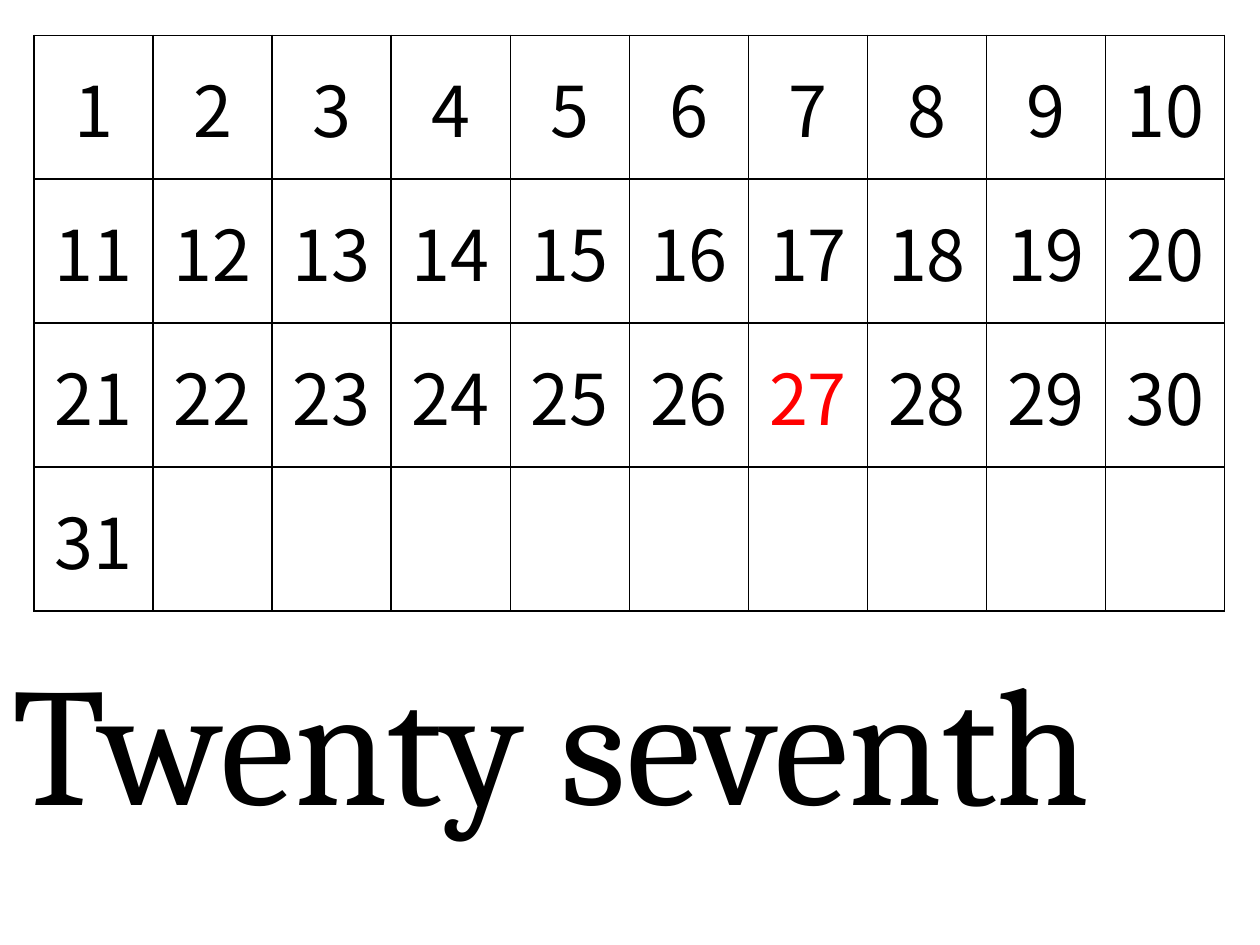
from lxml.etree import SubElement
from pptx import Presentation
from pptx.dml.color import RGBColor
from pptx.enum.text import MSO_ANCHOR as Anchor, MSO_AUTO_SIZE as AutoSize, PP_ALIGN as Align
from pptx.oxml.ns import qn
from pptx.util import Inches, Pt

BLACK, RED = "000000", "FF0000"
DAYS, COLUMNS, ROWS = 31, 10, 4
MARKED_DAY = 27


def color(hex_value):
    return RGBColor.from_string(hex_value)


def format_text(paragraph, alignment, font_color, **font_format):
    paragraph.alignment = alignment
    font = paragraph.runs[0].font
    for name, value in font_format.items():
        setattr(font, name, value)
    font.color.rgb = color(font_color)


def add_borders(cell, hex_value, width):
    properties = cell._tc.get_or_add_tcPr()
    for position, side in enumerate(("lnL", "lnR", "lnT", "lnB")):
        line = SubElement(properties, qn(f"a:{side}"), w=str(width))
        fill = SubElement(line, qn("a:solidFill"))
        SubElement(fill, qn("a:srgbClr"), val=hex_value)
        properties.insert(position, line)


def add_calendar(slide, left, top, width, height):
    table = slide.shapes.add_table(ROWS, COLUMNS, left, top, width, height).table
    table.first_row = table.horz_banding = False
    for index, cell in enumerate(table.iter_cells()):
        day = index + 1
        cell.fill.background()
        add_borders(cell, BLACK, Pt(1))
        cell.vertical_anchor = Anchor.MIDDLE
        if day <= DAYS:
            cell.text = str(day)
            format_text(cell.text_frame.paragraphs[0], Align.CENTER,
                        RED if day == MARKED_DAY else BLACK,
                        name="Noto Sans CJK JP", size=Pt(40))


def place_title(slide, text, left, top, width, height):
    title = slide.shapes.title
    box = {"left": left, "top": top, "width": width, "height": height}
    for name, value in box.items():
        setattr(title, name, value)
    frame = title.text_frame
    frame.text = text
    frame_format = {"word_wrap": True, "auto_size": AutoSize.NONE,
                    "vertical_anchor": Anchor.TOP}
    for name, value in frame_format.items():
        setattr(frame, name, value)
    format_text(frame.paragraphs[0], Align.LEFT, BLACK, name="Cambria", size=Pt(96))


def main():
    presentation = Presentation()
    presentation.slide_width, presentation.slide_height = Inches(10), Inches(7.5)
    slide = presentation.slides.add_slide(presentation.slide_layouts[5])
    add_calendar(slide, Inches(0.27), Inches(0.28), Inches(9.45), Inches(4.57))
    place_title(slide, "Twenty seventh",
                Inches(0), Inches(5.01), Inches(10.13), Inches(1.72))
    presentation.save("out.pptx")


if __name__ == "__main__":
    main()
